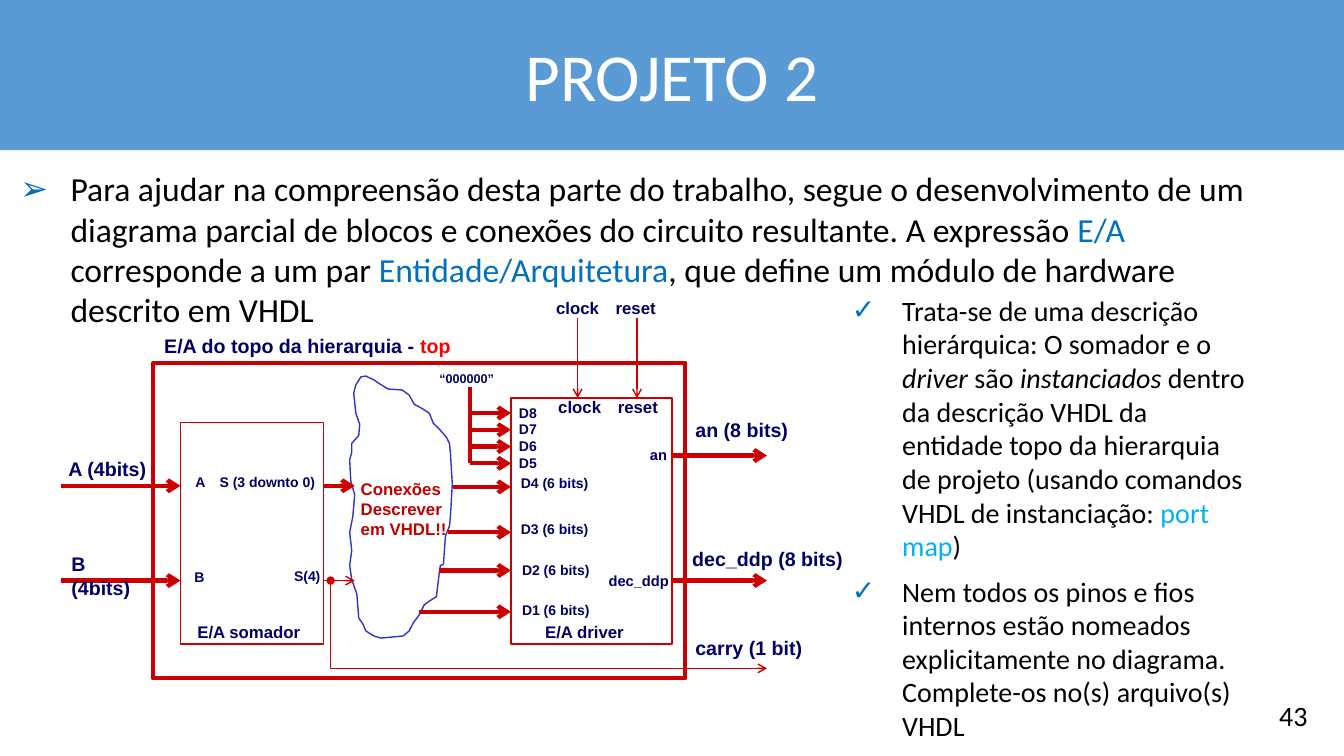
from lxml import etree
from pptx import Presentation
from pptx import util as u
from pptx.dml.color import RGBColor
from pptx.enum import shapes, text
from pptx.oxml.ns import qn

Pt = u.Pt
WHITE = RGBColor(0xFF, 0xFF, 0xFF)
BLACK = RGBColor(0, 0, 0)
BAND = RGBColor(0x5B, 0x9B, 0xD5)
BLUE = RGBColor(0x00, 0x70, 0xC0)
CYAN = RGBColor(0x00, 0xB0, 0xF0)
NAVY = RGBColor(0x00, 0x00, 0x66)
WIRE = RGBColor(0xCC, 0, 0)
RED = RGBColor(0xFF, 0, 0)
DARK_RED = RGBColor(0xC0, 0, 0)
CLOUD_BLUE = RGBColor(0x33, 0x33, 0xCC)

INTRO = [[
    ("Para ajudar na compreensão desta parte do trabalho, segue o desenvolvimento de um "
     "diagrama parcial de blocos e conexões do circuito resultante. A expressão ", None, False),
    ("E/A", BLUE, False),
    (" corresponde a um par ", None, False),
    ("Entidade/Arquitetura", BLUE, False),
    (", que define um módulo de hardware descrito em VHDL", None, False),
]]
NOTES = [[
    ("Trata-se de uma descrição hierárquica: O somador e o ", None, False),
    ("driver", None, True),
    (" são ", None, False),
    ("instanciados", None, True),
    (" dentro da descrição VHDL da entidade topo da hierarquia de projeto "
     "(usando comandos VHDL de instanciação: ", None, False),
    ("port map", CYAN, False),
    (")", None, False),
], [
    ("Nem todos os pinos e fios internos estão nomeados explicitamente no diagrama. "
     "Complete-os no(s) arquivo(s) VHDL", None, False),
]]

CLOUD = [
    (277.2, 277.9), (271.4, 274.3), (267.1, 271.4), (261.4, 268.6), (257.8, 269.3),
    (254.2, 275), (252.7, 280.8), (254.2, 295.2), (257, 303.1), (256.3, 311),
    (251.3, 316.8), (251.3, 323.3), (249.8, 328.3), (250.6, 343.4), (253.4, 353.5),
    (252, 369.4), (249.8, 380.2), (251.3, 393.1), (249.8, 403.9), (251.3, 414),
    (254.9, 424.1), (256.3, 441.4), (259.2, 445.7), (261.4, 450.7), (267.1, 454.3),
    (272.2, 455.8), (288, 454.3), (292.3, 450.7), (295.2, 445), (299.5, 439.2),
    (303.1, 432), (308.2, 428.4), (311.8, 426.2), (313.2, 414), (314.6, 403.9),
    (316.8, 403.2), (318.2, 383), (321.1, 375.8), (321.8, 368.6), (323.1, 345.6),
    (321.8, 324), (321.1, 316.8), (319, 312.5), (314.6, 307.4), (309.6, 302.4),
    (306.7, 295.2), (302.4, 292.3), (295.9, 288.7), (292.3, 282.2), (287.3, 278.6),
]

# text, left, top, width, height, size
LABELS = [
    ("A (4bits)", 41.8, 322.6, 70.6, 24.5, 14),
    ("an (8 bits)", 489.6, 295.2, 80.6, 24.5, 14),
    ("dec_ddp (8 bits)", 487.4, 387.4, 122.4, 24.5, 14),
    ("carry (1 bit)", 489.6, 450.7, 91.4, 24.5, 14),
    ("E/A somador", 133.9, 440.6, 88.6, 21.6, 12),
    ("E/A driver", 382.3, 440.6, 71.3, 21.6, 12),
    ("A", 132.5, 334.8, 21.6, 19.4, 10),
    ("B", 131.8, 402.5, 21.6, 19.4, 10),
    ("S (3 downto 0)", 149.8, 334.8, 86.4, 19.4, 10),
    ("S(4)", 203, 401.8, 33.8, 19.4, 10),
    ("“000000”", 306.7, 261.4, 56.2, 18, 9),
    ("D8\nD7\nD6\nD5", 363.6, 285.1, 27.4, 55.4, 10),
    ("D4 (6 bits)", 365, 335.5, 63.4, 19.4, 10),
    ("D3 (6 bits)", 365, 367.9, 63.4, 19.4, 10),
    ("D2 (6 bits)", 365.8, 397.4, 63.4, 19.4, 10),
    ("D1 (6 bits)", 365.8, 426.2, 63.4, 19.4, 10),
    ("an", 457.2, 314.6, 27.4, 20.9, 10.5),
    ("dec_ddp", 427.7, 404.6, 59, 20.2, 10.5),
]

# left end, right end, height, line width
BUSES = [
    (230.4, 253.4, 347, 3), (230.4, 253.4, 414.7, 1),
    (43.9, 128.9, 347, 3), (43.9, 128.9, 414.7, 3),
    (480.2, 547.9, 325.4, 3), (480.2, 547.9, 414.7, 3),
    (323.3, 365, 347.8, 3), (319.7, 365, 380.2, 3),
    (313.9, 365, 407.5, 3), (299.5, 365, 437, 3),
]


def set_font(font, size, color, name="Arial", bold=True):
    font.name, font.size, font.bold = name, Pt(size), bold
    font.color.rgb = color


def place(shape, left, top, width, height):
    shape.left, shape.top = Pt(left), Pt(top)
    shape.width, shape.height = Pt(width), Pt(height)


def add_title(page, wording):
    title = page.shapes.title
    place(title, 0, 0, 960, 107.3)
    title.fill.solid()
    title.fill.fore_color.rgb = BAND
    title.text_frame.text = wording
    title.text_frame.vertical_anchor = text.MSO_ANCHOR.MIDDLE
    para = title.text_frame.paragraphs[0]
    para.alignment = text.PP_ALIGN.CENTER
    set_font(para.font, 48, WHITE, "Calibri", False)


def add_list(body, items, bullet, size, frame):
    place(body, *frame)
    body.text_frame.auto_size = text.MSO_AUTO_SIZE.NONE
    for number, item in enumerate(items):
        para = body.text_frame.paragraphs[0] if number == 0 else body.text_frame.add_paragraph()
        props = para._p.get_or_add_pPr()
        props.set("marL", str(Pt(36)))
        props.set("indent", str(Pt(-36)))
        tint = etree.SubElement(props, qn("a:buClr"))
        etree.SubElement(tint, qn("a:srgbClr"), val=str(BLUE))
        etree.SubElement(props, qn("a:buFont"), typeface="Arial")
        etree.SubElement(props, qn("a:buChar"), char=bullet)
        para.space_before = Pt(8.5 if number else 0)
        set_font(para.font, size, BLACK, "Calibri", False)
        for wording, color, italic in item:
            span = para.add_run()
            span.text = wording
            if color is not None:
                span.font.color.rgb = color
            if italic:
                span.font.italic = True


def add_label(page, wording, left, top, width, height, size, color=NAVY, wrap=False):
    box = page.shapes.add_textbox(Pt(left), Pt(top), Pt(width), Pt(height))
    box.text_frame.word_wrap = wrap
    box.text_frame.text = wording
    for para in box.text_frame.paragraphs:
        set_font(para.font, size, color)
    return box.text_frame.paragraphs[0]


def add_block(page, left, top, width, height, weight):
    block = page.shapes.add_shape(shapes.MSO_SHAPE.RECTANGLE,
                                  Pt(left), Pt(top), Pt(width), Pt(height))
    block.shadow.inherit = False
    block.fill.background()
    block.line.color.rgb, block.line.width = WIRE, Pt(weight)


def add_wire(page, x1, y1, x2, y2, weight, head=None, tail="arrow",
             kind=shapes.MSO_CONNECTOR.STRAIGHT):
    wire = page.shapes.add_connector(kind, Pt(x1), Pt(y1), Pt(x2), Pt(y2))
    wire.line.color.rgb, wire.line.width = WIRE, Pt(weight)
    props = wire.element.spPr
    line = props.find(qn("a:ln"))
    for end, style in (("a:headEnd", head), ("a:tailEnd", tail)):
        if style:
            etree.SubElement(line, qn(end), type=style)
    etree.SubElement(props, qn("a:effectLst"))
    return wire


def add_carry_wire(page):
    """Drop straight down from S(4), then run right."""
    wire = add_wire(page, 236.2, 414.7, 547.9, 477.4, 1, head="oval",
                    kind=shapes.MSO_CONNECTOR.ELBOW)
    guides = wire.element.spPr.find(qn("a:prstGeom")).find(qn("a:avLst"))
    etree.SubElement(guides, qn("a:gd"), name="adj1", fmla="val 0")


def add_cloud(page):
    points = [(Pt(x), Pt(y)) for x, y in CLOUD]
    builder = page.shapes.build_freeform(*points[0])
    builder.add_line_segments(points[1:], close=True)
    cloud = builder.convert_to_shape()
    cloud.shadow.inherit = False
    cloud.fill.background()
    cloud.line.color.rgb, cloud.line.width = CLOUD_BLUE, Pt(1)


def main():
    deck = Presentation()
    deck.slide_width, deck.slide_height = Pt(960), Pt(540)
    page = deck.slides.add_slide(deck.slide_layouts[3])
    add_title(page, "PROJETO 2")
    add_list(page.placeholders[1], INTRO, "➢", 24, (7.2, 116.6, 917.3, 123.8))
    add_list(page.placeholders[2], NOTES, "✓", 20, (601.2, 205.9, 296.6, 330.5))

    add_block(page, 109.4, 259.2, 380.2, 225.4, 3)
    add_block(page, 128.9, 301.7, 102.2, 158.4, 1)
    add_block(page, 365, 284.4, 115.2, 175.7, 1)
    add_cloud(page)

    for start, end, height, weight in BUSES:
        add_wire(page, start, height, end, height, weight)
    add_wire(page, 335.5, 276.5, 335.5, 331, 3, tail=None)
    for digit in range(4):
        height = 295 + 12 * digit
        add_wire(page, 335.5, height, 365, height, 3)
    add_carry_wire(page)

    for name, wire_x, left, width in (("clock", 412.6, 390.2, 45.4), ("reset", 455, 432.7, 43.2)):
        add_wire(page, wire_x, 227.5, wire_x, 284.4, 1)
        add_label(page, name, left, 208.8, width, 21.6, 12)
        add_label(page, name, left + 1.5, 280.1, width, 21.6, 12)
    for label in LABELS:
        add_label(page, *label)
    add_label(page, "B (4bits)", 43.9, 391, 66, 40, 14, wrap=True)
    add_label(page, "Conexões\vDescrever\nem VHDL!!", 250.6, 338.4, 76.3, 51.1, 12, DARK_RED)

    heading = add_label(page, "E/A do topo da hierarquia - ", 110.2, 234.7, 219.6, 24.5, 14)
    top = heading.add_run()
    top.text = "top"
    top.font.color.rgb = RED

    number = add_label(page, "43", 884.2, 495.4, 56.9, 31.7, 20, BLACK)
    set_font(number.font, 20, BLACK, "Calibri", False)
    number.alignment = text.PP_ALIGN.RIGHT
    deck.save("out.pptx")


if __name__ == "__main__":
    main()
